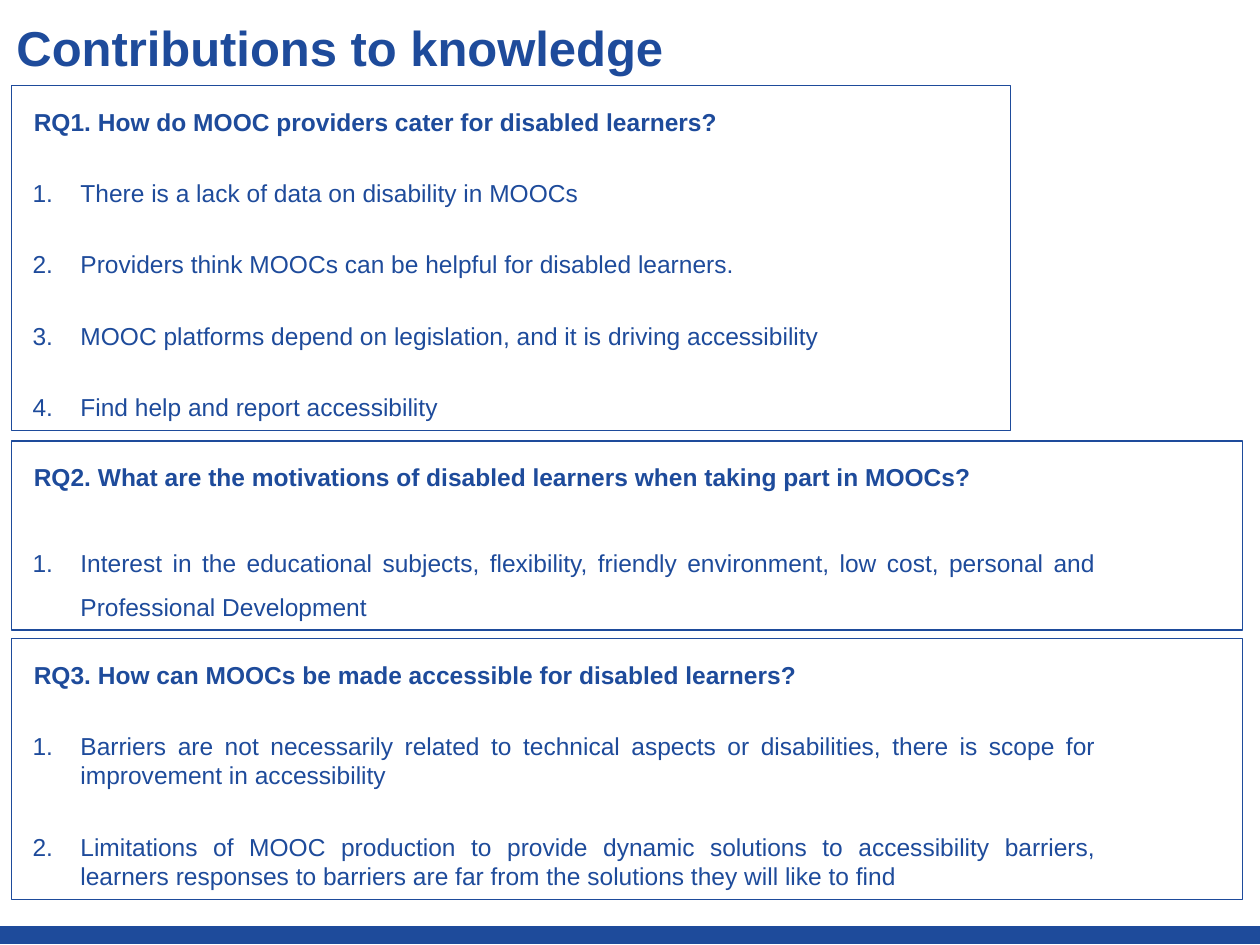
from dataclasses import dataclass

from lxml import etree
from pptx import Presentation
from pptx.dml.color import RGBColor
from pptx.enum.shapes import MSO_SHAPE
from pptx.enum.text import MSO_ANCHOR, MSO_AUTO_SIZE, PP_ALIGN
from pptx.oxml.ns import qn
from pptx.util import Inches, Pt

RECTANGLE = MSO_SHAPE.RECTANGLE
TOP = MSO_ANCHOR.TOP
NO_AUTOFIT = MSO_AUTO_SIZE.NONE
LEFT, JUSTIFY = PP_ALIGN.LEFT, PP_ALIGN.JUSTIFY


@dataclass(frozen=True)
class Theme:
    blue: RGBColor = RGBColor(0x1E, 0x4B, 0x9B)
    font: str = "Arial"
    title_size: Pt = Pt(28)
    body_size: Pt = Pt(14)
    paragraph_gap: Pt = Pt(12)
    border: Pt = Pt(0.75)


@dataclass(frozen=True)
class Panel:
    top: float
    width: float
    height: float
    question: str
    findings: tuple[str, ...]
    right_inset: float = 0.1
    finding_spacing: float = 1.0


THEME = Theme()
PANEL_LEFT = 0.09
PANELS = (
    Panel(0.68, 7.93, 2.74, "RQ1. How do MOOC providers cater for disabled learners?", (
        "There is a lack of data on disability in MOOCs",
        "Providers think MOOCs can be helpful for disabled learners.",
        "MOOC platforms depend on legislation, and it is driving accessibility",
        "Find help and report accessibility",
    )),
    Panel(3.5, 9.77, 1.5,
          "RQ2. What are the motivations of disabled learners when taking part in MOOCs?", (
              "Interest in the educational subjects, flexibility, friendly environment, "
              "low cost, personal and Professional Development",
          ), right_inset=1.16, finding_spacing=1.5),
    Panel(5.07, 9.77, 2.07, "RQ3. How can MOOCs be made accessible for disabled learners?", (
        "Barriers are not necessarily related to technical aspects or disabilities, "
        "there is scope for improvement in accessibility",
        "Limitations of MOOC production to provide dynamic solutions to accessibility "
        "barriers, learners responses to barriers are far from the solutions they will "
        "like to find",
    ), right_inset=1.16),
)


def apply(target, formats: dict) -> None:
    for name, value in formats.items():
        setattr(target, name, value)


def style_font(p, size: Pt, bold: bool) -> None:
    apply(p.font, {"name": THEME.font, "size": size, "bold": bold})
    p.font.color.rgb = THEME.blue


def set_indent(p, margin: float, first_line: float) -> None:
    pPr = p._p.get_or_add_pPr()
    pPr.set("marL", str(Inches(margin)))
    pPr.set("indent", str(Inches(first_line)))


def add_title(slide, text: str) -> None:
    sp = slide.shapes.title
    apply(sp, {"left": Inches(0.09), "top": Inches(0.17),
               "width": Inches(8.08), "height": Inches(1.03)})
    tf = sp.text_frame
    apply(tf, {"text": text, "word_wrap": True, "auto_size": NO_AUTOFIT,
               "vertical_anchor": TOP,
               "margin_left": Inches(0.04), "margin_top": Inches(0.04),
               "margin_right": Inches(0.02), "margin_bottom": Inches(0.04)})
    p = tf.paragraphs[0]
    apply(p, {"alignment": LEFT, "line_spacing": 0.85, "space_before": Pt(0)})
    style_font(p, THEME.title_size, True)


def add_footer_bar(slide) -> None:
    sp = slide.shapes.add_shape(RECTANGLE, 0, Inches(7.36), Inches(10), Inches(0.13))
    sp.shadow.inherit = False
    sp.fill.solid()
    sp.fill.fore_color.rgb = THEME.blue
    sp.line.color.rgb = THEME.blue
    sp.line.width = Pt(1)


def add_finding(tf, text: str, spacing: float) -> None:
    p = tf.add_paragraph()
    p.text = text
    apply(p, {"alignment": JUSTIFY, "line_spacing": spacing,
              "space_before": THEME.paragraph_gap, "space_after": THEME.paragraph_gap})
    set_indent(p, 0.45, -0.38)
    etree.SubElement(p._p.get_or_add_pPr(), qn("a:buAutoNum"), type="arabicPeriod")
    style_font(p, THEME.body_size, False)


def add_panel(slide, panel: Panel) -> None:
    sp = slide.shapes.add_shape(RECTANGLE, Inches(PANEL_LEFT), Inches(panel.top),
                                Inches(panel.width), Inches(panel.height))
    sp.shadow.inherit = False
    sp.fill.background()
    sp.line.color.rgb = THEME.blue
    sp.line.width = THEME.border
    tf = sp.text_frame
    apply(tf, {"word_wrap": True, "auto_size": NO_AUTOFIT, "vertical_anchor": TOP,
               "margin_right": Inches(panel.right_inset)})
    p = tf.paragraphs[0]
    p.text = panel.question
    apply(p, {"alignment": JUSTIFY, "line_spacing": 1.5,
              "space_after": THEME.paragraph_gap})
    set_indent(p, 0.08, 0)
    style_font(p, THEME.body_size, True)
    for finding in panel.findings:
        add_finding(tf, finding, panel.finding_spacing)


def main() -> None:
    prs = Presentation()
    prs.slide_width, prs.slide_height = Inches(10), Inches(7.5)
    slide = prs.slides.add_slide(prs.slide_layouts[5])
    add_footer_bar(slide)
    add_title(slide, "Contributions to knowledge")
    for panel in PANELS:
        add_panel(slide, panel)
    prs.save("out.pptx")


if __name__ == "__main__":
    main()
